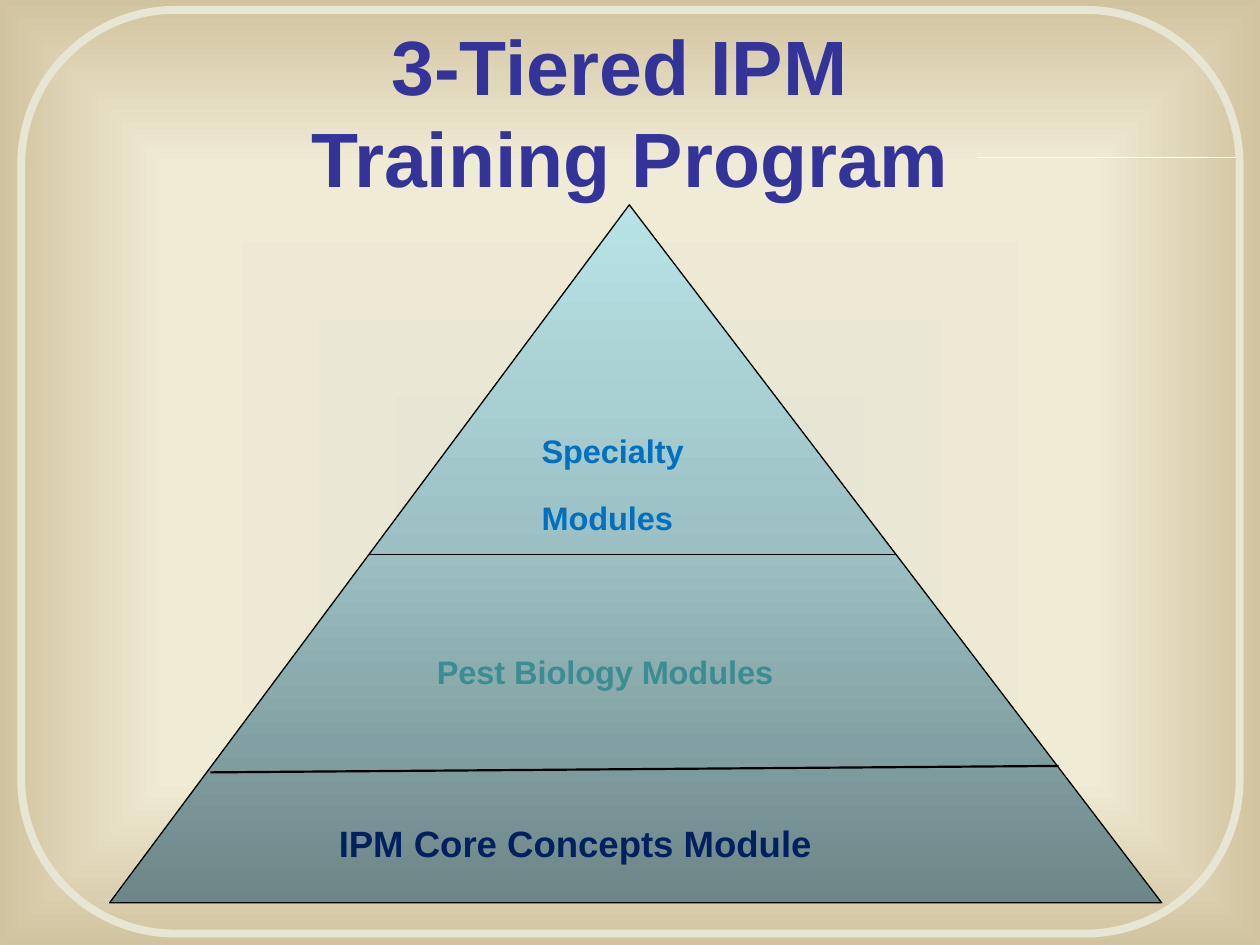
"""Build the three-tier IPM training pyramid slide."""
from dataclasses import dataclass
from typing import Any, NamedTuple

import lxml.etree
import pptx
import pptx.dml.color
import pptx.enum.shapes
import pptx.enum.text
import pptx.oxml.ns
import pptx.util

Cm = pptx.util.Cm
Pt = pptx.util.Pt
RGB = pptx.dml.color.RGBColor.from_string
qn = pptx.oxml.ns.qn
Shape = pptx.enum.shapes.MSO_SHAPE


@dataclass(frozen=True)
class Theme:
    font: str = "Arial"
    title: str = "333399"
    title_size: int = 44
    core: str = "002060"
    core_size: int = 36
    biology: str = "3C8C93"
    specialty: str = "0070C0"
    tier_size: int = 32
    frame: str = "E7E6D5"
    accent: str = "FFFFFF"
    outline: str = "000000"
    backdrop: tuple = ((0, "E7E6D5"), (65, "F0EBD5"), (100, "D1C39F"))
    pyramid: tuple = ((0, "6D8688"), (50, "9BBFC2"), (100, "B8E3E6"))


class Box(NamedTuple):
    left: float
    top: float
    width: float
    height: float

    def lengths(self) -> list:
        return [Cm(v) for v in self]


class Tier(NamedTuple):
    text: str
    box: Box
    size: int
    color: str


class Rule(NamedTuple):
    x1: float
    y1: float
    x2: float
    y2: float
    color: str
    width: float


THEME = Theme()
TIERS = (
    Tier("IPM Core Concepts Module", Box(6.58, 16.28, 12.47, 1.27), THEME.core_size, THEME.core),
    Tier("Pest Biology Modules", Box(8.56, 12.88, 8.33, 1.17), THEME.tier_size, THEME.biology),
    Tier("Specialty Modules", Box(10.67, 8.43, 4.22, 2.08), THEME.tier_size, THEME.specialty),
)
TITLE_RULE = Rule(19.69, 3.18, 24.94, 3.18, THEME.accent, 0.75)
TIER_RULES = (
    Rule(7.44, 11.18, 18.06, 11.18, THEME.outline, 0.75),
    Rule(4.24, 15.57, 21.34, 15.44, THEME.outline, 1.25),
)


def set_attrs(obj: Any, values: dict) -> None:
    for name, value in values.items():
        setattr(obj, name, value)


def format_run(r: Any, size: int, color: str) -> None:
    set_attrs(r.font, {"name": THEME.font, "size": Pt(size), "bold": True})
    r.font.color.rgb = RGB(color)


def set_line(line: Any, color: str, width: float) -> None:
    line.color.rgb = RGB(color)
    line.width = Pt(width)


def set_gradient(fill: Any, owner: Any, stops: tuple) -> Any:
    """Fill the owner with the stops and return the gradient element."""
    fill.gradient()
    grad = owner.find(".//" + qn("a:gradFill"))
    for child in list(grad):
        grad.remove(child)
    stop_list = lxml.etree.SubElement(grad, qn("a:gsLst"))
    for position, color in stops:
        stop = lxml.etree.SubElement(stop_list, qn("a:gs"), pos=str(position * 1000))
        lxml.etree.SubElement(stop, qn("a:srgbClr"), val=color)
    return grad


def add_backdrop(s: Any) -> None:
    grad = set_gradient(s.background.fill, s.element, THEME.backdrop)
    centre = lxml.etree.SubElement(grad, qn("a:path"), {"path": "shape"})
    sides = dict.fromkeys("ltrb", "50000")
    lxml.etree.SubElement(centre, qn("a:fillToRect"), sides)


def add_rule(s: Any, rule: Rule) -> None:
    ends = [Cm(v) for v in rule[:4]]
    line = s.shapes.add_connector(pptx.enum.shapes.MSO_CONNECTOR.STRAIGHT, *ends)
    set_line(line.line, rule.color, rule.width)
    lxml.etree.SubElement(line.element.spPr, qn("a:effectLst"))


def add_outline(s: Any, kind: Any, box: Box, adjust: float, color: str, width: float) -> Any:
    sp = s.shapes.add_shape(kind, *box.lengths())
    sp.shadow.inherit = False
    sp.adjustments[0] = adjust
    set_line(sp.line, color, width)
    return sp


def add_title(s: Any, text: str, box: Box) -> None:
    sp = s.shapes.title
    set_attrs(sp, dict(zip(("left", "top", "width", "height"), box.lengths())))
    tf = sp.text_frame
    set_attrs(tf, {"text": text, "word_wrap": True,
                   "auto_size": pptx.enum.text.MSO_AUTO_SIZE.NONE,
                   "vertical_anchor": pptx.enum.text.MSO_ANCHOR.MIDDLE})
    p = tf.paragraphs[0]
    p.alignment = pptx.enum.text.PP_ALIGN.CENTER
    for r in p.runs:
        format_run(r, THEME.title_size, THEME.title)


def add_tier(s: Any, tier: Tier) -> None:
    tf = s.shapes.add_textbox(*tier.box.lengths()).text_frame
    set_attrs(tf, {"word_wrap": True,
                   "auto_size": pptx.enum.text.MSO_AUTO_SIZE.SHAPE_TO_FIT_TEXT})
    r = tf.paragraphs[0].add_run()
    r.text = tier.text
    format_run(r, tier.size, tier.color)
    r.font._element.set("baseline", "30000")


def main() -> None:
    prs = pptx.Presentation()
    set_attrs(prs, {"slide_width": Cm(25.4), "slide_height": Cm(19.05)})
    s = prs.slides.add_slide(prs.slide_layouts[5])
    add_backdrop(s)
    add_rule(s, TITLE_RULE)
    frame = add_outline(s, Shape.ROUNDED_RECTANGLE, Box(0.43, 0.2, 24.56, 18.62),
                        0.167, THEME.frame, 4.5)
    frame.fill.background()
    add_title(s, "3-Tiered IPM \vTraining Program", Box(3.58, 0.64, 18.26, 3.18))
    pyramid = add_outline(s, Shape.ISOSCELES_TRIANGLE, Box(2.21, 4.13, 21.21, 14.07),
                          0.494, THEME.outline, 0.75)
    grad = set_gradient(pyramid.fill, pyramid.element, THEME.pyramid)
    lxml.etree.SubElement(grad, qn("a:lin"), ang=str(270 * 60000), scaled="0")
    for tier in TIERS:
        add_tier(s, tier)
    for rule in TIER_RULES:
        add_rule(s, rule)
    prs.save("out.pptx")


if __name__ == "__main__":
    main()
